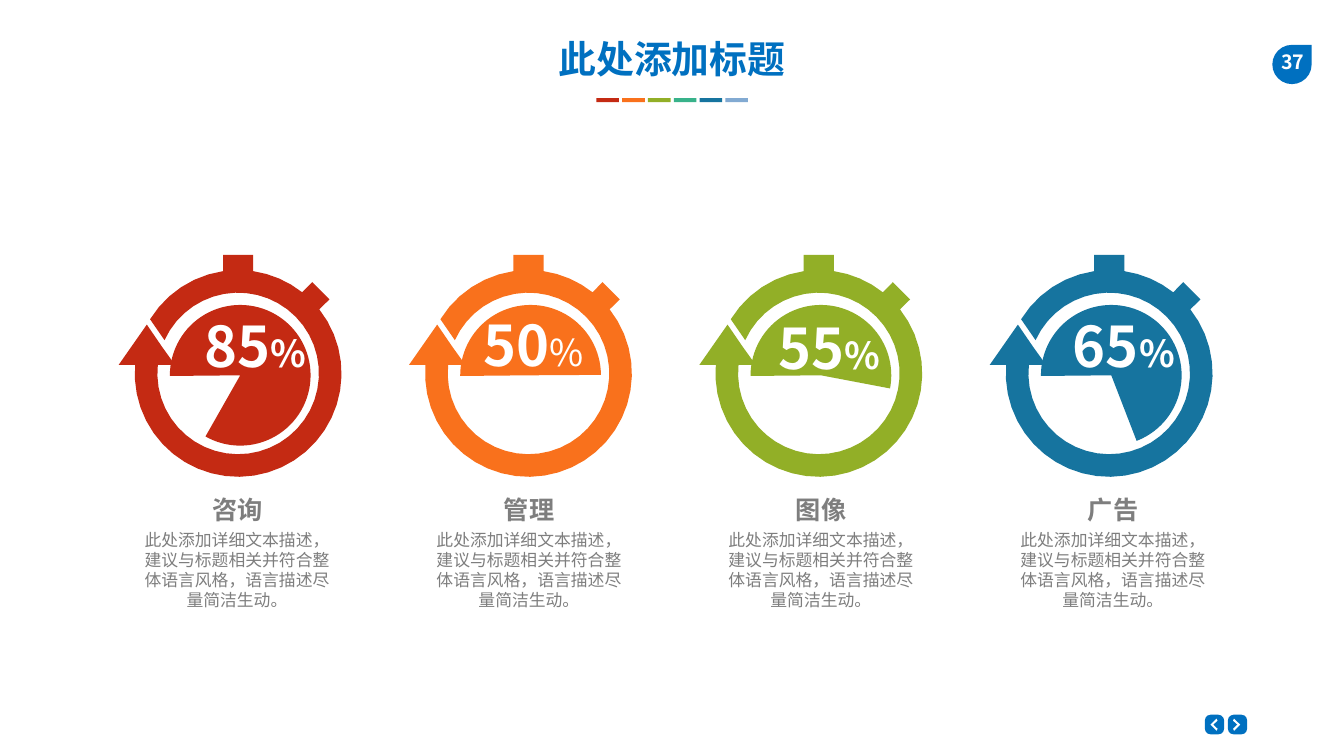
from dataclasses import dataclass
from math import cos, radians, sin

from lxml.etree import SubElement
from pptx import Presentation
from pptx.dml.color import RGBColor
from pptx.enum.shapes import MSO_SHAPE as Preset
from pptx.enum.text import MSO_ANCHOR as Anchor, MSO_AUTO_SIZE as AutoSize, PP_ALIGN as Align
from pptx.oxml.ns import qn
from pptx.shapes.autoshape import Shape
from pptx.slide import Slide
from pptx.util import Cm, Pt

FONT = "Noto Sans CJK SC"
COLORS = {
    "red": "C42A13", "orange": "F9711C", "green": "92AF27", "teal": "38B28A",
    "navy": "16749F", "sky": "82AAD2", "blue": "0070C0", "gray": "7E7E7E", "white": "FFFFFF",
}
BODY = "此处添加详细文本描述，建议与标题相关并符合整体语言风格，语言描述尽量简洁生动。"
OUTER, INNER = 5.21, 4.07
ARC_STEP = 8
CENTER_X, CENTER_Y, WATCH_PITCH = 12.0, 18.82, 14.63
TEXT_PITCH = 14.71
PIE_SIZE, PIE_START = 7.09, 179.44

Point = tuple[float, float]


@dataclass(frozen=True)
class Rect:
    left: float
    top: float
    width: float
    height: float


@dataclass(frozen=True)
class Span:
    text: str
    size: float
    color: str
    bold: bool = False


@dataclass(frozen=True)
class Watch:
    title: str
    number: str
    color: str
    pie_end: float
    label: Rect
    bold_sign: bool = True


WATCHES = [
    Watch("咨询", "85", "red", 119.58, Rect(9.88, 15.57, 6.02, 3.63)),
    Watch("管理", "50", "orange", 359.66, Rect(24.1, 16.23, 5.56, 2.21), False),
    Watch("图像", "55", "green", 10.78, Rect(38.76, 15.67, 6.02, 3.63)),
    Watch("广告", "65", "navy", 68.86, Rect(53.62, 15.57, 6.02, 3.63)),
]


def paint(shape: Shape, color: str) -> None:
    shape.shadow.inherit = False
    shape.fill.solid()
    shape.fill.fore_color.rgb = RGBColor.from_string(COLORS[color])
    shape.line.fill.background()


def add_preset(page: Slide, preset: Preset, rect: Rect, color: str) -> Shape:
    shape = page.shapes.add_shape(
        preset, Cm(rect.left), Cm(rect.top), Cm(rect.width), Cm(rect.height))
    paint(shape, color)
    return shape


def add_outline(page: Slide, points: list[Point], left: float, top: float, color: str) -> None:
    corners = [(Cm(left + x), Cm(top + y)) for x, y in points]
    builder = page.shapes.build_freeform(*corners[0])
    builder.add_line_segments(corners[1:], close=True)
    paint(builder.convert_to_shape(), color)


def add_text(page: Slide, rect: Rect, spans: list[Span], inset: Point = (0.51, 0.25),
             wrap: bool = True, grow: bool = True, anchor: Anchor = Anchor.TOP,
             after: float = 0) -> None:
    box = page.shapes.add_textbox(
        Cm(rect.left), Cm(rect.top), Cm(rect.width), Cm(rect.height))
    frame = box.text_frame
    frame.word_wrap = wrap
    frame.auto_size = AutoSize.SHAPE_TO_FIT_TEXT if grow else AutoSize.NONE
    frame.vertical_anchor = anchor
    frame.margin_left = frame.margin_right = Cm(inset[0])
    frame.margin_top = frame.margin_bottom = Cm(inset[1])
    para = frame.paragraphs[0]
    para.alignment = Align.CENTER
    para.space_after = Pt(after)
    for item in spans:
        span = para.add_run()
        span.text = item.text
        span.font.size = Pt(item.size)
        span.font.bold = item.bold
        span.font.color.rgb = RGBColor.from_string(COLORS[item.color])
        span.font.name = FONT
        SubElement(span.font._element, qn("a:ea"), typeface=FONT)


def arc(radius: float, start: float, end: float) -> list[Point]:
    steps = max(2, round(abs(end - start) / ARC_STEP))
    angles = [radians(start + (end - start) * i / steps) for i in range(steps + 1)]
    return [(radius * cos(angle), radius * sin(angle)) for angle in angles]


def watch_outline() -> list[Point]:
    side_button = [(4.6, -3.73), (3.73, -4.6)]
    crown = [(0.76, -5.97), (-0.76, -5.97)]
    arrow = [(-3.18, -0.43), (-3.84, -1.35), (-4.6, -2.46), (-6.02, -0.43)]
    return [
        *side_button, *arc(OUTER, -51.7, -81.6),
        *crown, *arc(OUTER, -98.4, -148.4),
        *arc(INNER, -155.7, 186.1),
        *arrow, *arc(OUTER, 184.7, -38.3),
    ]


def add_watch(page: Slide, index: int, watch: Watch) -> None:
    center = CENTER_X + index * WATCH_PITCH
    add_outline(page, watch_outline(), center, CENTER_Y, watch.color)
    pie = add_preset(page, Preset.PIE,
                     Rect(center - 3.44, 15.37, PIE_SIZE, PIE_SIZE), watch.color)
    for i, degrees in enumerate((PIE_START, watch.pie_end)):
        pie.adjustments[i] = degrees * 0.6
    add_text(page, watch.label,
             [Span(watch.number, 80, "white", True), Span("%", 53, "white", watch.bold_sign)],
             inset=(0, 0), grow=False, anchor=Anchor.MIDDLE, after=8)
    shift = index * TEXT_PITCH
    add_text(page, Rect(6.76 + shift, 26.44, 10.36, 4.62), [Span(BODY, 24, "gray")])
    add_text(page, Rect(6.43 + shift, 24.64, 11.05, 2.06),
             [Span(watch.title, 36, "gray", True)])


def add_navigation(page: Slide) -> None:
    back = [(0.31, 0), (0.36, 0.1), (0.14, 0.3), (0.36, 0.51), (0.31, 0.61), (0, 0.3)]
    forward = [(0.36 - x, y) for x, y in back]
    for left, arrow_left, arrow in ((60.71, 60.99, back), (61.87, 62.13, forward)):
        button = add_preset(page, Preset.ROUNDED_RECTANGLE,
                            Rect(left, 36.02, 0.97, 0.99), "blue")
        button.adjustments[0] = 0.3
        add_outline(page, arrow, arrow_left, 36.22, "white")


def add_header(page: Slide) -> None:
    add_preset(page, Preset.TEAR, Rect(64.11, 2.26, 1.98, 1.98), "blue")
    add_text(page, Rect(63.91, 2.29, 2.46, 1.7), [Span("37", 28, "white", True)], wrap=False)
    add_text(page, Rect(16.69, 1.65, 34.34, 2.57),
             [Span("此处添加标题", 54, "blue", True)], inset=(0.25, 0.13))
    for i, color in enumerate(("red", "orange", "green", "teal", "navy", "sky")):
        add_preset(page, Preset.RECTANGLE, Rect(30.05 + i * 1.3, 4.95, 1.14, 0.2), color)


def main() -> None:
    deck = Presentation()
    deck.slide_width, deck.slide_height = Cm(67.72), Cm(38.1)
    page = deck.slides.add_slide(deck.slide_layouts[6])
    add_navigation(page)
    add_header(page)
    for index, watch in enumerate(WATCHES):
        add_watch(page, index, watch)
    deck.save("out.pptx")


if __name__ == "__main__":
    main()
